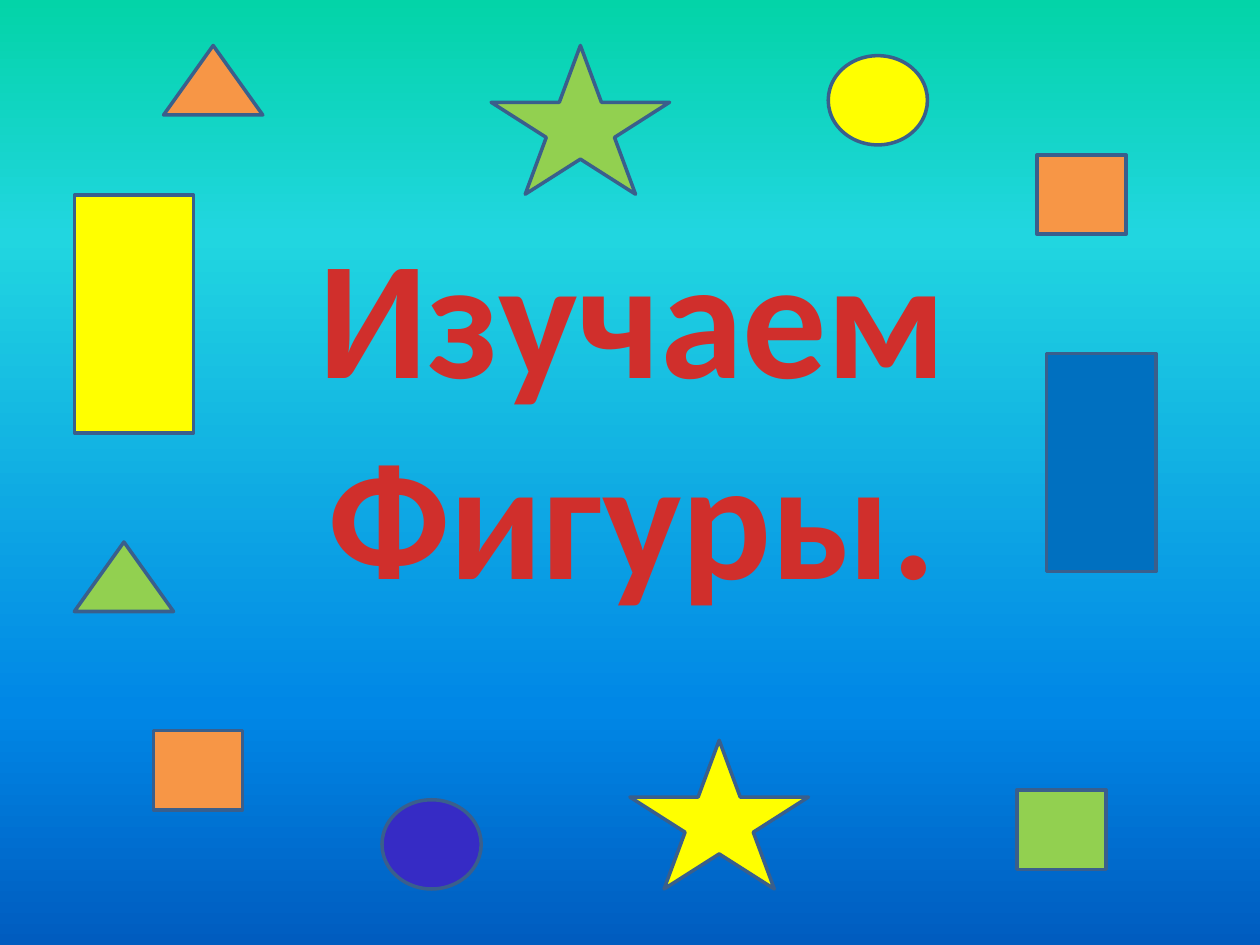
"""Build a title slide about geometric figures, framed by coloured shapes."""
from dataclasses import dataclass

from lxml import etree
from pptx import Presentation
from pptx.dml.color import RGBColor
from pptx.enum.shapes import MSO_SHAPE
from pptx.enum.text import MSO_AUTO_SIZE, PP_ALIGN
from pptx.oxml.ns import qn
from pptx.util import Pt

TRIANGLE = MSO_SHAPE.ISOSCELES_TRIANGLE
ELLIPSE = MSO_SHAPE.OVAL
SQUARE = MSO_SHAPE.RECTANGLE
BLOCK = MSO_SHAPE.FLOWCHART_PROCESS
STAR = MSO_SHAPE.STAR_5_POINT
CENTER = PP_ALIGN.CENTER
GROW = MSO_AUTO_SIZE.SHAPE_TO_FIT_TEXT


@dataclass(frozen=True)
class Theme:
    font: str = "Calibri"
    title_size: int = 96
    outline_width: int = 2
    outline: str = "3A5F8C"
    green: str = "92D050"
    violet: str = "362BC5"
    blue: str = "0070C0"
    yellow: str = "FFFF00"
    orange: str = "F79646"
    sky: tuple = ((0, "03D4A8"), (25, "21D6E0"), (75, "0087E6"), (100, "005CBF"))
    red: tuple = ((0, "FC7C7A"), (75, "D02F2C"), (100, "C70500"))


def set_gradient(fill, owner, stops):
    fill.gradient()
    fill.gradient_angle = 270
    stop_list = list(owner.iter(qn("a:gsLst")))[-1]
    for old_stop in list(stop_list):
        stop_list.remove(old_stop)
    for percent, color in stops:
        stop = etree.SubElement(stop_list, qn("a:gs"), pos=str(percent * 1000))
        etree.SubElement(stop, qn("a:srgbClr"), val=color)


theme = Theme()
presentation = Presentation()
presentation.slide_width = Pt(720)
presentation.slide_height = Pt(540)
slide = presentation.slides.add_slide(presentation.slide_layouts[6])
set_gradient(slide.background.fill, slide.element, theme.sky)

title = slide.shapes.add_textbox(Pt(172.8), Pt(116.6), Pt(377.3), Pt(239.8))
title_frame = title.text_frame
title_frame.word_wrap = True
title_frame.auto_size = GROW
title_frame.text = "Изучаем\nФигуры."
for paragraph in title_frame.paragraphs:
    paragraph.alignment = CENTER
    paragraph.font.name = theme.font
    paragraph.font.size = Pt(theme.title_size)
    paragraph.font.bold = True
    set_gradient(paragraph.font.fill, title.element, theme.red)

sizes = {
    TRIANGLE: (56.7, 39.7),
    ELLIPSE: (56.7, 51),
    SQUARE: (51, 45.4),
    STAR: (102, 85),
}
figures = [
    (TRIANGLE, 42.5, 309.7, theme.green),
    (ELLIPSE, 218.3, 457, theme.violet),
    (SQUARE, 581.1, 451.4, theme.green),
    (STAR, 360, 423, theme.yellow),
    (SQUARE, 592.5, 88.5, theme.orange),
    (TRIANGLE, 93.5, 26, theme.orange),
    (ELLIPSE, 473.3, 31.8, theme.yellow),
    (SQUARE, 87.7, 417.4, theme.orange),
    (STAR, 280.7, 26, theme.green),
]
shapes = []
for kind, left, top, color in figures:
    width, height = sizes[kind]
    shape = slide.shapes.add_shape(kind, Pt(left), Pt(top), Pt(width), Pt(height))
    shapes.append((shape, color))

blocks = [
    (566.9, 233, 124.7, 62.6, 270, theme.blue),
    (8.5, 145.4, 136.1, 68, 90, theme.yellow),
]
for left, top, width, height, rotation, color in blocks:
    block = slide.shapes.add_shape(BLOCK, Pt(left), Pt(top), Pt(width), Pt(height))
    block.rotation = rotation
    shapes.append((block, color))

for shape, color in shapes:
    shape.shadow.inherit = False
    shape.fill.solid()
    shape.fill.fore_color.rgb = RGBColor.from_string(color)
    shape.line.color.rgb = RGBColor.from_string(theme.outline)
    shape.line.width = Pt(theme.outline_width)

presentation.save("out.pptx")
